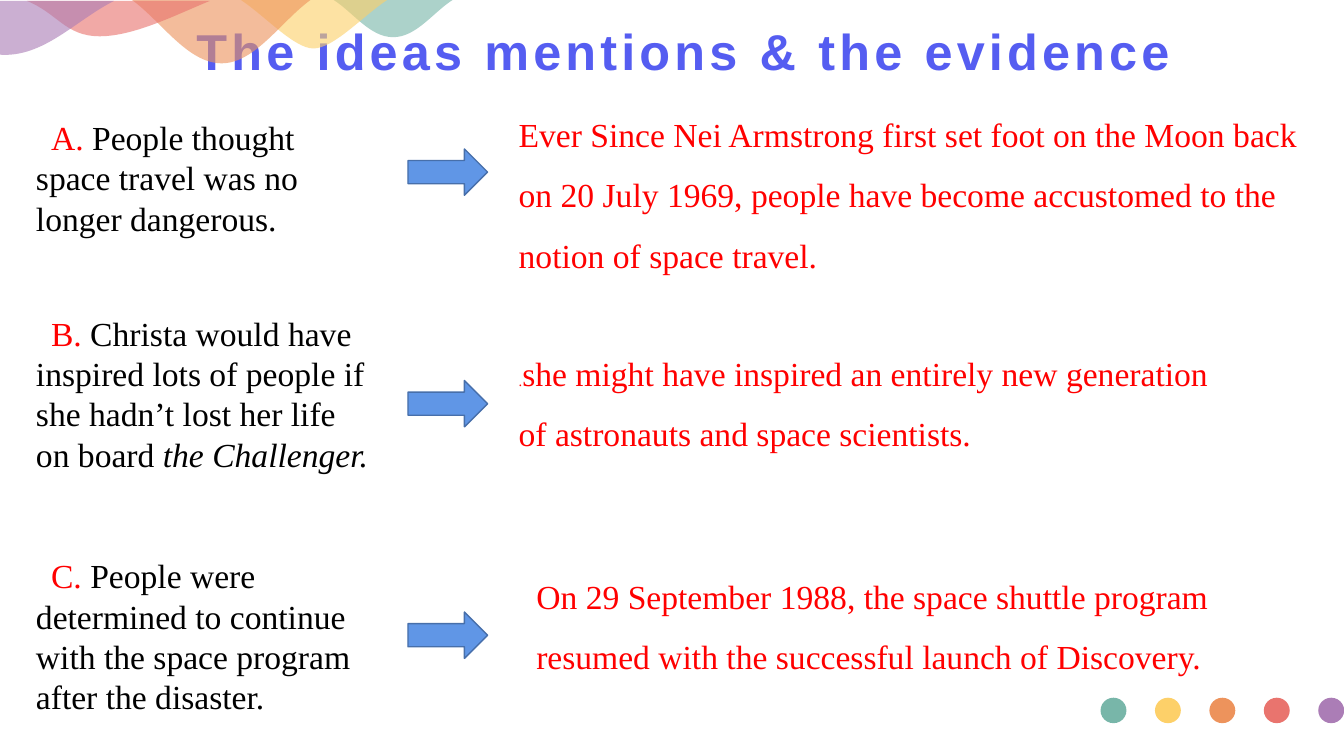
from lxml import etree
from pptx import Presentation
from pptx.dml.color import RGBColor
from pptx.enum import shapes, text
from pptx.oxml.ns import qn
from pptx.util import Pt

# Content
TITLE = "The ideas mentions & the evidence"
RED, BLACK = "FF0000", "000000"
SERIF = "Times New Roman"
# idea top, idea height, idea runs (text, colour, italic),
# evidence box (left, top, width, height), evidence runs (text, size)
ROWS = [
    (79.9, 94.3,
     [("A. ", RED, False),
      ("People thought space travel was no longer dangerous.", BLACK, False)],
     (363.4, 63.4, 578.2, 138.2),
     [("Ever Since Nei Armstrong first set foot on the Moon back on 20 July 1969, "
       "people have become accustomed to the notion of space travel.", 24)]),
    (219.8, 123.8,
     [("B.", RED, False),
      (" Christa would have inspired lots of people if she hadn’t lost her life "
       "on board ", BLACK, False),
      ("the Challenger.", BLACK, True)],
     (363.4, 234, 523.4, 94.3),
     [(".", 10.5),
      ("she might have inspired an entirely new generation of astronauts "
       "and space scientists.", 24)]),
    (393.1, 123.8,
     [("C. ", RED, False),
      ("People were determined to continue with the space program "
       "after the disaster.", BLACK, False)],
     (376, 393.1, 526.3, 94.3),
     [("On 29 September 1988, the space shuttle program resumed with the "
       "successful launch of Discovery.", 24)]),
]
# colour, top, shoulder and depth of the wave, x of its seven curve points
WAVES = [
    ("78B6A9", 0, 8.6, 26.6, (323.3, 309.6, 297.4, 280.8, 264.2, 252, 238.3)),
    ("FDD069", 0, 11.5, 34.6, (276.5, 259.2, 238.3, 223.9, 210.2, 189.4, 172.1)),
    ("ED935C", 0, 15.1, 45.2, (221.8, 200.9, 182.2, 158.4, 133.9, 115.2, 94.3)),
    ("E9746E", 0.7, 9.4, 25.9, (149.8, 128.2, 96.5, 71.3, 46.8, 41, 19.4)),
    ("AB7DB6", 0.7, 13.7, 39.2, (81.4, 55.4, 33.1, 3.6, -25.9, -48.2, -74.9)),
]
DOT_LEFT, DOT_TOP, DOT_STEP = 786.1, 498.4, 38.88
ARROW_TOP, ARROW_STEP = 106.4, 165.4
IDEA_INDENT = 10.8

deck = Presentation()
deck.slide_width, deck.slide_height = Pt(960), Pt(540)
slide = deck.slides.add_slide(deck.slide_layouts[6])


def rgb(hex_code):
    return RGBColor.from_string(hex_code)


def paint(shape, fill, line=None, alpha=None):
    shape.shadow.inherit = False
    shape.fill.solid()
    shape.fill.fore_color.rgb = rgb(fill)
    if alpha:
        colour = shape.fill._xPr.find(qn("a:solidFill"))[0]
        etree.SubElement(colour, qn("a:alpha")).set("val", str(alpha * 1000))
    if line:
        shape.line.color.rgb = rgb(line)
        shape.line.width = Pt(1)
    else:
        shape.line.fill.background()


def add_text(box, runs):
    """Runs are (text, font, size, colour, bold, italic)."""
    frame = slide.shapes.add_textbox(*map(Pt, box)).text_frame
    frame.word_wrap = True
    paragraph = frame.paragraphs[0]
    for words, face, size, colour, bold, italic in runs:
        run = paragraph.add_run()
        run.text = words
        font = run.font
        font.name, font.size, font.color.rgb = face, Pt(size), rgb(colour)
        font.bold, font.italic = bold, italic
    return frame, paragraph


def add_wave(points):
    """Two cubic curves, right to bottom to left, closed along the top."""
    right, bottom, left = points[::3]
    outline = slide.shapes.build_freeform(*right)
    outline.add_line_segments([bottom, left], close=True)
    wave = outline.convert_to_shape()
    for i, segment in enumerate(list(wave._element.iter(qn("a:lnTo")))[:2]):
        bend = etree.Element(qn("a:cubicBezTo"))
        for x, y in points[3 * i + 1:3 * i + 4]:
            point = etree.SubElement(bend, qn("a:pt"))
            point.set("x", str(x - wave.left))
            point.set("y", str(y - wave.top))
        segment.getparent().replace(segment, bend)
    return wave


# Title
frame, heading = add_text((94.3, 8.4, 788.4, 55.4),
                          [(TITLE, "Arial", 36, "555DF1", True, False)])
frame.vertical_anchor = text.MSO_ANCHOR.MIDDLE
heading.alignment = text.PP_ALIGN.CENTER
heading.runs[0].font._element.set("spc", "300")

# Dots at the lower right, in the colours of the waves
for i, (colour, *_) in enumerate(WAVES):
    dot = slide.shapes.add_shape(shapes.MSO_SHAPE.OVAL, Pt(DOT_LEFT + i * DOT_STEP),
                                 Pt(DOT_TOP), Pt(18.5), Pt(18.2))
    paint(dot, colour)

# Translucent waves along the top edge
for colour, top, shoulder, depth, xs in WAVES:
    ys = (top, shoulder, depth, depth, depth, shoulder, top)
    paint(add_wave([(Pt(x), Pt(y)) for x, y in zip(xs, ys)]), colour, alpha=61)

# Ideas, arrows and evidence
for i, (top, height, idea, evidence_box, evidence) in enumerate(ROWS):
    _, paragraph = add_text((18.6, top, 257.8, height),
                            [(words, SERIF, 24, colour, False, italic)
                             for words, colour, italic in idea])
    paragraph._p.get_or_add_pPr().set("indent", str(Pt(IDEA_INDENT)))

    arrow = slide.shapes.add_shape(shapes.MSO_SHAPE.RIGHT_ARROW, Pt(291.4),
                                   Pt(ARROW_TOP + i * ARROW_STEP), Pt(56.9), Pt(33.1))
    paint(arrow, "6096E6", line="476FAA")

    _, paragraph = add_text(evidence_box, [(words, SERIF, size, RED, False, False)
                                           for words, size in evidence])
    paragraph.line_spacing = 1.5

deck.save("out.pptx")
